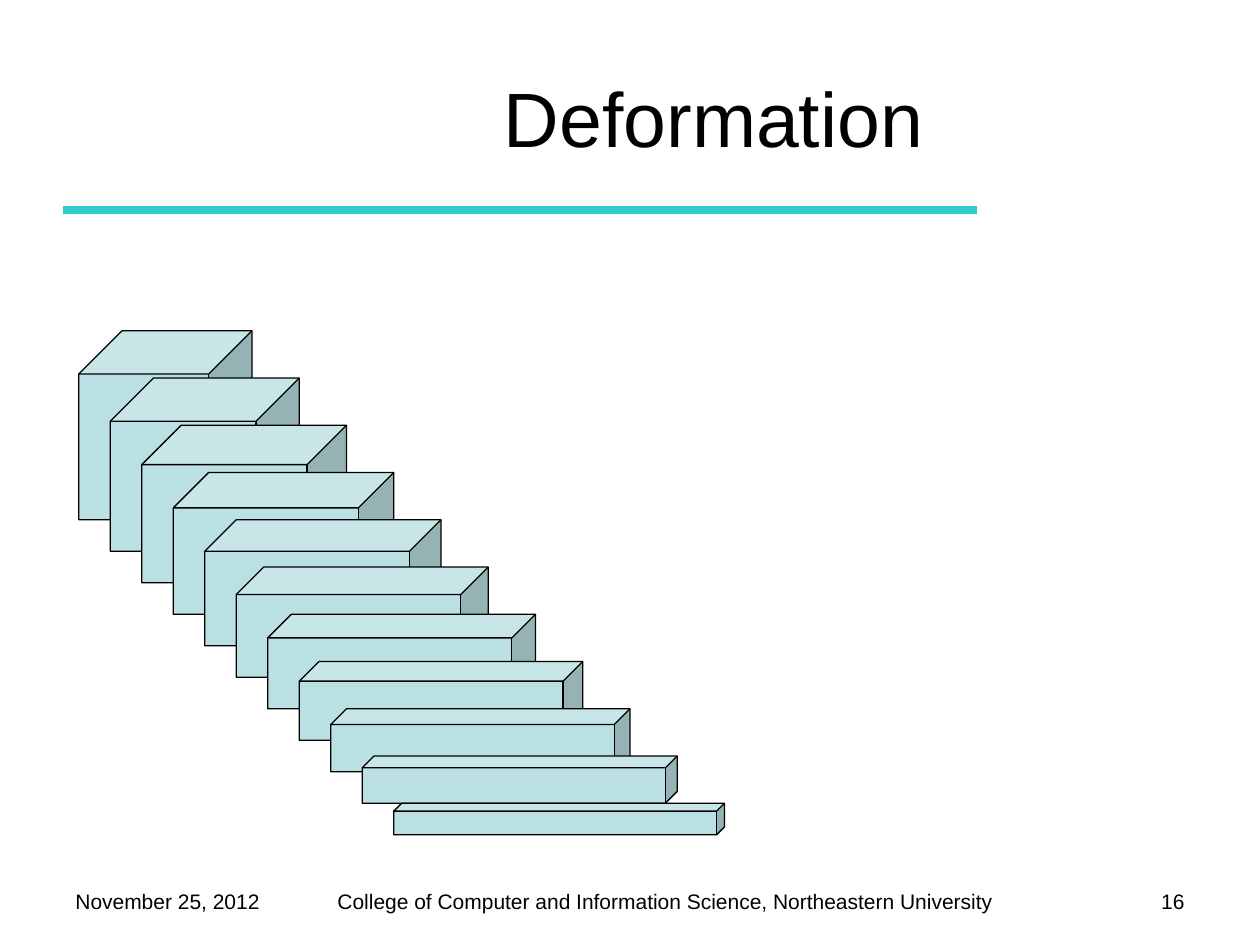
from dataclasses import dataclass

from pptx import Presentation
from pptx.dml.color import RGBColor
from pptx.enum.shapes import MSO_CONNECTOR, MSO_SHAPE
from pptx.enum.text import MSO_ANCHOR, PP_ALIGN
from pptx.oxml.ns import qn
from pptx.util import Inches, Pt
from lxml import etree

CUBE = MSO_SHAPE.CUBE
STRAIGHT = MSO_CONNECTOR.STRAIGHT
LEFT, CENTER, RIGHT = PP_ALIGN.LEFT, PP_ALIGN.CENTER, PP_ALIGN.RIGHT
TOP, MIDDLE = MSO_ANCHOR.TOP, MSO_ANCHOR.MIDDLE

FONT = "Arial"
BLACK = "000000"
CUBE_FILL = "BBE0E3"
RULE_COLOR = "33CCCC"
CUBE_COUNT = 11
STEP = 1 / 8


@dataclass
class Label:
    text: str
    left: float
    top: float
    width: float
    height: float
    size: int = 12
    align: PP_ALIGN = LEFT
    anchor: MSO_ANCHOR = TOP


@dataclass
class Cube:
    left: float
    top: float
    width: float
    height: float


LABELS = [
    Label("College of Computer and Information Science, Northeastern University",
          2.58, 7, 5.5, 0.3),
    Label("November 25, 2012", 0.5, 7, 1.75, 0.33),
    Label("16", 8.67, 7, 0.83, 0.35, align=RIGHT),
    Label("Deformation", 1.83, 0.3, 7.67, 1.25, 44, CENTER, MIDDLE),
]

CUBES = [
    Cube((5 + 2 * i) * STEP, (21 + 3 * i) * STEP, (11 + i) * STEP, (12 - i) * STEP)
    for i in range(CUBE_COUNT)
]


def rgb(value: str) -> RGBColor:
    return RGBColor.from_string(value)


def draw_label(s, label: Label) -> None:
    box = s.shapes.add_textbox(Inches(label.left), Inches(label.top),
                               Inches(label.width), Inches(label.height))
    tf = box.text_frame
    tf.word_wrap = True
    tf.vertical_anchor = label.anchor
    p = tf.paragraphs[0]
    p.alignment = label.align
    r = p.add_run()
    r.text = label.text
    for name, value in {"name": FONT, "size": Pt(label.size)}.items():
        setattr(r.font, name, value)
    r.font.color.rgb = rgb(BLACK)


def draw_rule(s, left: float, right: float, y: float) -> None:
    rule = s.shapes.add_connector(STRAIGHT, Inches(left), Inches(y),
                                  Inches(right), Inches(y))
    rule.line.color.rgb = rgb(RULE_COLOR)
    rule.line.width = Pt(4.5)
    etree.SubElement(rule._element.spPr, qn("a:effectLst"))


def draw_cube(s, cube: Cube) -> None:
    sp = s.shapes.add_shape(CUBE, Inches(cube.left), Inches(cube.top),
                            Inches(cube.width), Inches(cube.height))
    sp.adjustments[0] = 0.25
    sp.shadow.inherit = False
    sp.fill.solid()
    sp.fill.fore_color.rgb = rgb(CUBE_FILL)
    sp.line.color.rgb = rgb(BLACK)
    sp.line.width = Pt(0.75)


def main() -> None:
    prs = Presentation()
    prs.slide_width, prs.slide_height = Inches(10), Inches(7.5)
    s = prs.slides.add_slide(prs.slide_layouts[6])
    draw_rule(s, 0.5, 7.75, 1.67)
    for label in LABELS:
        draw_label(s, label)
    for cube in CUBES:
        draw_cube(s, cube)
    prs.save("out.pptx")


if __name__ == "__main__":
    main()
